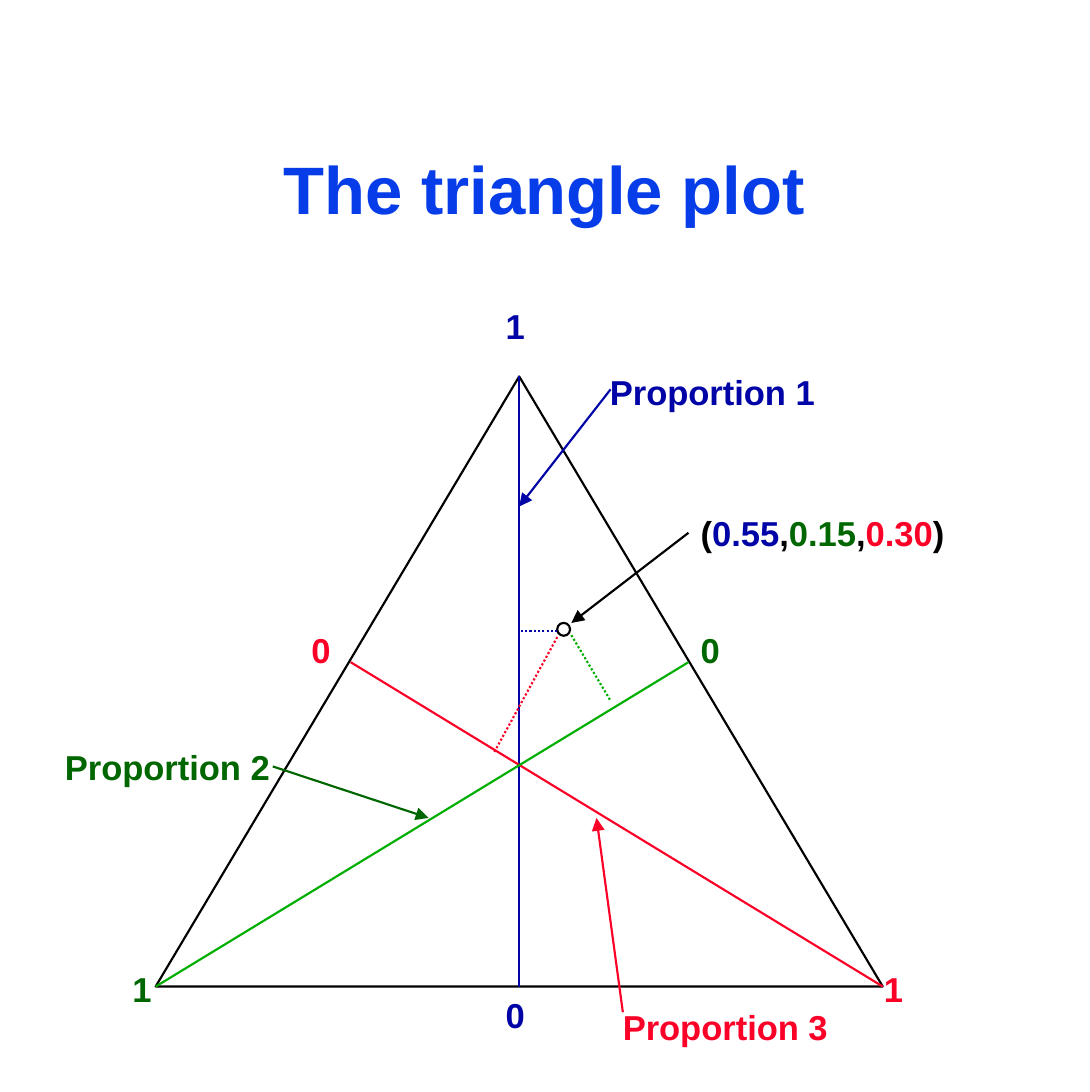
from lxml import etree
from pptx import Presentation
from pptx.dml.color import RGBColor
from pptx.enum.dml import MSO_LINE
from pptx.enum.shapes import MSO_CONNECTOR, MSO_SHAPE
from pptx.enum.text import MSO_ANCHOR, MSO_AUTO_SIZE, PP_ALIGN
from pptx.oxml.ns import qn
from pptx.util import Cm, Pt

DOTS = MSO_LINE.ROUND_DOT
STRAIGHT = MSO_CONNECTOR.STRAIGHT
TRIANGLE = MSO_SHAPE.ISOSCELES_TRIANGLE
OVAL = MSO_SHAPE.OVAL
MIDDLE = MSO_ANCHOR.MIDDLE
CENTER = PP_ALIGN.CENTER
GROW = MSO_AUTO_SIZE.SHAPE_TO_FIT_TEXT

COLORS = {
    "title": "063DE8",
    "black": "000000",
    "white": "FFFFFF",
    "blue": "0003A5",
    "red": "FC0128",
    "green": "006600",
    "lime": "00AE00",
}

LEFT, MID, RIGHT = 2.54, 8.47, 14.4
TOP, BASE = 6.14, 16.09


def rgb(name):
    return RGBColor.from_string(COLORS[name])


def style(run, size, color):
    font = run.font
    font.name = "Arial"
    font.size = Pt(size)
    font.bold = True
    font.color.rgb = rgb(color)


def add_title(slide, text):
    title = slide.shapes.title
    title.left, title.top = Cm(1.32), Cm(1.57)
    title.width, title.height = Cm(15.11), Cm(2.97)
    frame = title.text_frame
    frame.text = text
    frame.vertical_anchor = MIDDLE
    para = frame.paragraphs[0]
    para.alignment = CENTER
    style(para.runs[0], 31, "title")


def add_label(slide, x, y, width, parts, wrap=False):
    box = slide.shapes.add_textbox(Cm(x), Cm(y), Cm(width), Cm(0.94))
    frame = box.text_frame
    frame.word_wrap = wrap
    frame.auto_size = GROW
    para = frame.paragraphs[0]
    for text, color in parts:
        run = para.add_run()
        run.text = text
        style(run, 16, color)


def add_line(slide, start, end, color, arrow=False, dash=None):
    points = [Cm(value) for value in start + end]
    line = slide.shapes.add_connector(STRAIGHT, *points)
    line.line.color.rgb = rgb(color)
    line.line.width = Pt(1)
    if dash:
        line.line.dash_style = dash
    if arrow:
        tail = etree.SubElement(line.line._get_or_add_ln(), qn("a:tailEnd"))
        tail.set("type", "triangle")
    etree.SubElement(line._element.spPr, qn("a:effectLst"))


def add_form(slide, kind, x, y, width, height, fill=None):
    form = slide.shapes.add_shape(kind, Cm(x), Cm(y), Cm(width), Cm(height))
    form.shadow.inherit = False
    form.line.color.rgb = rgb("black")
    form.line.width = Pt(1)
    if fill:
        form.fill.solid()
        form.fill.fore_color.rgb = rgb(fill)
    else:
        form.fill.background()


def main():
    deck = Presentation()
    deck.slide_width, deck.slide_height = Cm(17.78), Cm(17.81)
    slide = deck.slides.add_slide(deck.slide_layouts[5])
    add_title(slide, "The triangle plot")
    add_form(slide, TRIANGLE, LEFT, TOP, RIGHT - LEFT, BASE - TOP)

    for start, end, color in [
        ((MID, TOP), (MID, BASE), "blue"),
        ((RIGHT, BASE), (5.72, 10.8), "red"),
        ((LEFT, BASE), (11.23, 10.8), "lime"),
    ]:
        add_line(slide, start, end, color)

    for x, y, text, color in [
        (8, 4.85, "1", "blue"),
        (8, 16.08, "0", "blue"),
        (4.83, 10.13, "0", "red"),
        (11.18, 10.13, "0", "green"),
    ]:
        add_label(slide, x, y, 0.81, [(text, color)])
    for x, color in [(1.91, "green"), (14.17, "red")]:
        add_label(slide, x, 15.67, 0.51, [("1", color)], wrap=True)

    for x, y, text, color in [
        (9.7, 5.92, "Proportion 1", "blue"),
        (0.81, 12.04, "Proportion 2", "green"),
        (9.91, 16.28, "Proportion 3", "red"),
    ]:
        add_label(slide, x, y, 3.86, [(text, color)])

    add_form(slide, OVAL, 9.09, 10.16, 0.21, 0.21, "white")
    add_label(slide, 11.18, 8.23, 4.5, [
        ("(", "black"), ("0.55", "blue"), (",", "black"),
        ("0.15", "green"), (",", "black"), ("0.30", "red"), (")", "black"),
    ])

    for start, end, color in [
        ((9.96, 6.35), (MID, 8.26), "blue"),
        ((4.45, 12.5), (6.99, 13.34), "green"),
        ((10.16, 16.51), (9.73, 13.34), "red"),
        ((11.23, 8.69), (9.32, 10.16), "black"),
    ]:
        add_line(slide, start, end, color, arrow=True)

    for start, end, color in [
        ((9.09, 10.29), (MID, 10.29), "blue"),
        ((9.32, 10.36), (9.96, 11.43), "lime"),
        ((9.09, 10.39), (8.05, 12.29), "red"),
    ]:
        add_line(slide, start, end, color, dash=DOTS)

    deck.save("out.pptx")


if __name__ == "__main__":
    main()
